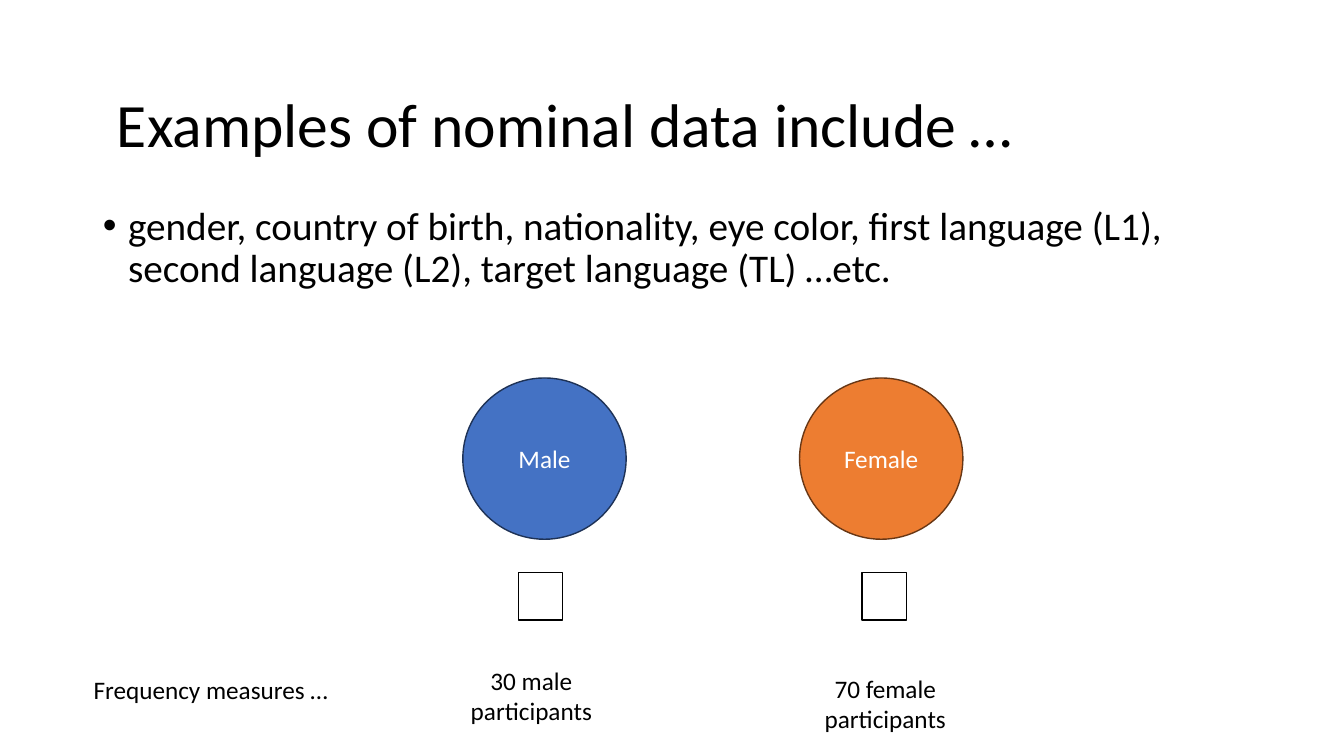
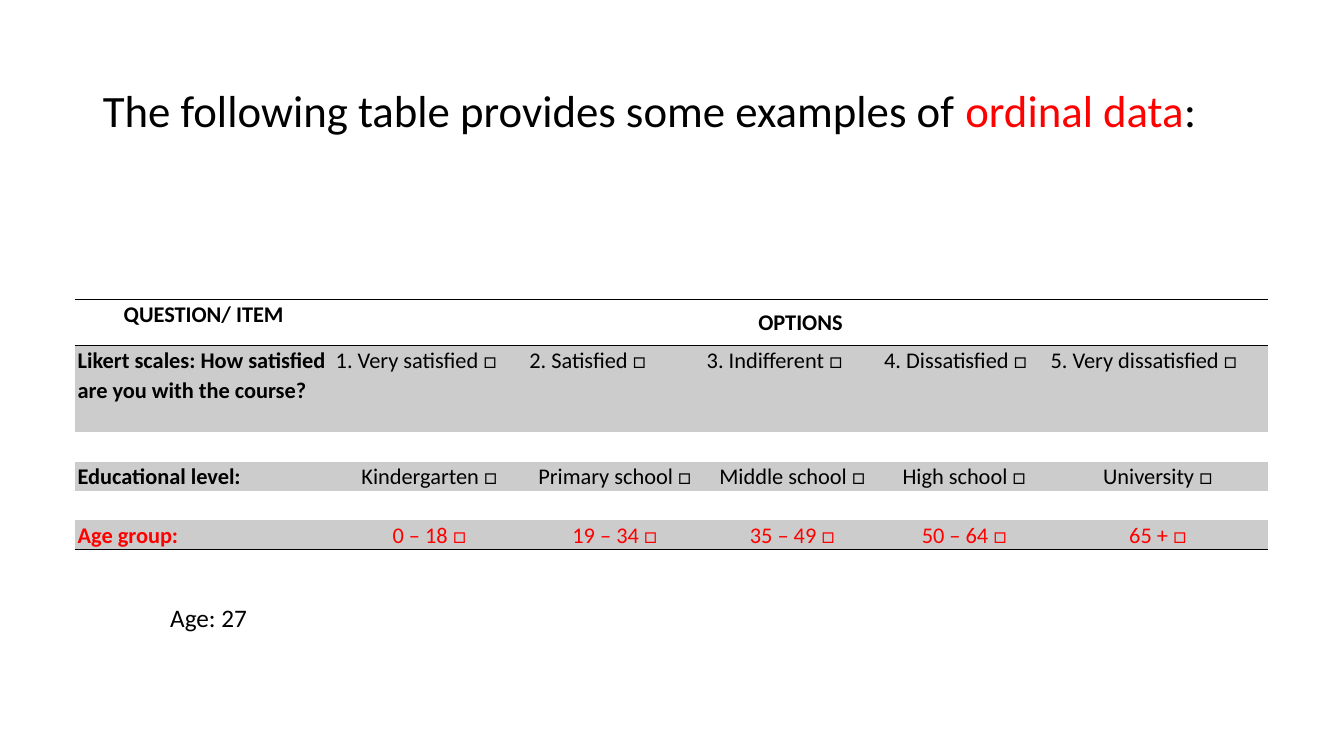
from lxml import etree
from pptx import Presentation
from pptx.dml.color import RGBColor
from pptx.enum.shapes import MSO_SHAPE
from pptx.enum.text import MSO_ANCHOR, PP_ALIGN
from pptx.oxml.ns import qn
from pptx.util import Inches, Pt

LEFT, CENTER = PP_ALIGN.LEFT, PP_ALIGN.CENTER
MIDDLE, TOP = MSO_ANCHOR.MIDDLE, MSO_ANCHOR.TOP
OVAL, RECTANGLE = MSO_SHAPE.OVAL, MSO_SHAPE.RECTANGLE

FONT = "Calibri"
COLORS = {
    "text": "000000",
    "paper": "FFFFFF",
    "accent": "FF0000",
    "band": "CCCCCC",
    "male": "4472C4",
    "male_line": "1E3256",
    "female": "ED7D31",
    "female_line": "683715",
}
TITLE_LAYOUT, TITLE_BODY_LAYOUT = 5, 1
TITLE_BOX = (0.92, 0.4, 11.5, 1.45)
NO_GRID_STYLE = "{2D5ABB26-0587-4C30-8999-92F81FD0307C}"

COLUMN_WIDTHS = [2.56, 1.92, 1.76, 1.76, 1.65, 2.19]
HEADER_HEIGHT, QUESTION_HEIGHT, ROW_HEIGHT = 0.46, 0.86, 0.29
# Each question: its words, colour and alignment of its options.
QUESTIONS = [
    (["Likert scales: How satisfied are you with the course?",
      "1. Very satisfied □", "2. Satisfied □", "3. Indifferent □",
      "4. Dissatisfied □", "5. Very dissatisfied □"], "text", LEFT),
    (["Educational level:", "Kindergarten □", "Primary school □",
      "Middle school □", "High school □", "University □"], "text", CENTER),
    (["Age group:", "0 – 18 □", "19 – 34 □", "35 – 49 □", "50 – 64 □",
      "65 + □"], "accent", CENTER),
]


def rgb(name):
    return RGBColor.from_string(COLORS[name])


def place(shape, box):
    shape.left, shape.top, shape.width, shape.height = map(Inches, box)


def write(para, runs, size, align=LEFT, bold=False, spacing=None):
    """Add (text, colour) runs to a paragraph."""
    para.alignment = align
    para.line_spacing = spacing
    for text, color in runs:
        span = para.add_run()
        span.text = text
        span.font.name = FONT
        span.font.size = Pt(size)
        span.font.bold = bold
        span.font.color.rgb = rgb(color)


def add_title(slide, runs, size, box=TITLE_BOX):
    title = slide.shapes.title
    place(title, box)
    title.text_frame.vertical_anchor = MIDDLE
    write(title.text_frame.paragraphs[0], runs, size, spacing=0.9)


def add_bullet_body(slide, box, text):
    body = slide.placeholders[1]
    place(body, box)
    para = body.text_frame.paragraphs[0]
    write(para, [(text, "text")], 28, spacing=0.9)
    para.space_before = Pt(10)
    properties = para._p.get_or_add_pPr()
    properties.set("marL", str(Inches(0.25)))
    properties.set("indent", str(-Inches(0.25)))
    etree.SubElement(properties, qn("a:buFont"), typeface="Arial")
    etree.SubElement(properties, qn("a:buChar"), char="•")


def add_label(slide, box, text, align=LEFT):
    label = slide.shapes.add_textbox(*map(Inches, box))
    label.text_frame.word_wrap = True
    write(label.text_frame.paragraphs[0], [(text, "text")], 18, align)


def add_outlined(slide, kind, box, fill, line):
    shape = slide.shapes.add_shape(kind, *map(Inches, box))
    shape.shadow.inherit = False
    shape.fill.solid()
    shape.fill.fore_color.rgb = rgb(fill)
    shape.line.color.rgb = rgb(line)
    shape.line.width = Pt(1)
    return shape


def add_participants(slide, left, top, name, tick_shift, caption_shift, caption):
    """Stack a named circle, a tick box and a count; shifts are from left, top."""
    key = name.lower()
    circle = add_outlined(slide, OVAL, (left, top, 1.62, 1.6), key, key + "_line")
    circle.text_frame.vertical_anchor = MIDDLE
    write(circle.text_frame.paragraphs[0], [(name, "paper")], 18, CENTER)
    add_outlined(slide, RECTANGLE, (left + tick_shift, top + 1.93, 0.44, 0.47),
                 "paper", "text")
    across, down = caption_shift
    add_label(slide, (left + across, top + down, 1.62, 0.71), caption, CENTER)


def set_borders(cell, sides):
    properties = cell._tc.get_or_add_tcPr()
    for side in sides:
        line = etree.SubElement(properties, qn("a:ln" + side), w=str(Pt(1)))
        fill = etree.SubElement(line, qn("a:solidFill"))
        etree.SubElement(fill, qn("a:srgbClr"), val=COLORS["text"])


def format_cell(cell, borders="", band=None, margins=(0.03, 0)):
    across, down = map(Inches, margins)
    cell.margin_left = cell.margin_right = across
    cell.margin_top = cell.margin_bottom = down
    cell.vertical_anchor = TOP
    set_borders(cell, borders)
    if band:
        cell.fill.solid()
        cell.fill.fore_color.rgb = rgb(band)
    else:
        cell.fill.background()


def write_cell(cell, text, color="text", align=LEFT, bold=False):
    write(cell.text_frame.paragraphs[0], [(text, color)], 16, align, bold, 1.07)


def add_question_table(slide, left, top):
    """Draw a header, then banded questions with an empty row between them."""
    heights = [HEADER_HEIGHT, QUESTION_HEIGHT] + [ROW_HEIGHT] * 4
    frame = slide.shapes.add_table(
        len(heights), len(COLUMN_WIDTHS), Inches(left), Inches(top),
        Inches(sum(COLUMN_WIDTHS)), Inches(sum(heights)))
    table = frame.table
    table.first_row = table.horz_banding = False
    table._tbl.tblPr.find(qn("a:tableStyleId")).text = NO_GRID_STYLE
    for column, width in zip(table.columns, COLUMN_WIDTHS):
        column.width = Inches(width)
    for row, height in zip(table.rows, heights):
        row.height = Inches(height)

    for index, cell in enumerate(table.rows[0].cells):
        format_cell(cell, "TB", margins=(0.16, 0.08) if index else (0.03, 0))
    table.cell(0, 1).merge(table.cell(0, len(COLUMN_WIDTHS) - 1))
    for index, text in enumerate(["QUESTION/ ITEM", "OPTIONS"]):
        write_cell(table.cell(0, index), text, align=CENTER, bold=True)

    last = len(heights) - 1
    for number, (texts, color, align) in enumerate(QUESTIONS):
        row = 1 + 2 * number
        for index, text in enumerate(texts):
            cell = table.cell(row, index)
            format_cell(cell, "B" if row == last else "", "band")
            write_cell(cell, text, color, align if index else LEFT, index == 0)
            if row < last:
                gap = table.cell(row + 1, index)
                format_cell(gap)
                etree.SubElement(gap.text_frame.paragraphs[0]._p,
                                 qn("a:endParaRPr"), sz="1600")


def build_nominal_slide(deck):
    slide = deck.slides.add_slide(deck.slide_layouts[TITLE_BODY_LAYOUT])
    add_title(slide, [("Examples of nominal data include …", "text")], 44,
              (1.06, 0.54, 11.36, 1.45))
    add_bullet_body(slide, (0.92, 2, 11.5, 4.76),
                    "gender, country of birth, nationality, eye color, "
                    "first language (L1), second language (L2), "
                    "target language (TL) …etc.")
    add_participants(slide, 4.59, 3.75, "Male", 0.55, (-0.13, 2.8),
                     "30 male participants")
    add_participants(slide, 7.93, 3.75, "Female", 0.62, (0.04, 2.88),
                     "70 female participants")
    add_label(slide, (0.83, 6.64, 2.68, 0.4), "Frequency measures …")


def build_ordinal_slide(deck):
    slide = deck.slides.add_slide(deck.slide_layouts[TITLE_LAYOUT])
    add_title(slide, [("The following table provides some examples of ", "text"),
                      ("ordinal data", "accent"), (":", "text")], 32)
    add_question_table(slide, 0.74, 2.97)
    add_label(slide, (1.59, 5.93, 1.93, 0.4), "Age: 27")


def main():
    deck = Presentation()
    deck.slide_width, deck.slide_height = Inches(13.33), Inches(7.5)
    build_nominal_slide(deck)
    build_ordinal_slide(deck)
    deck.save("out.pptx")


if __name__ == "__main__":
    main()
